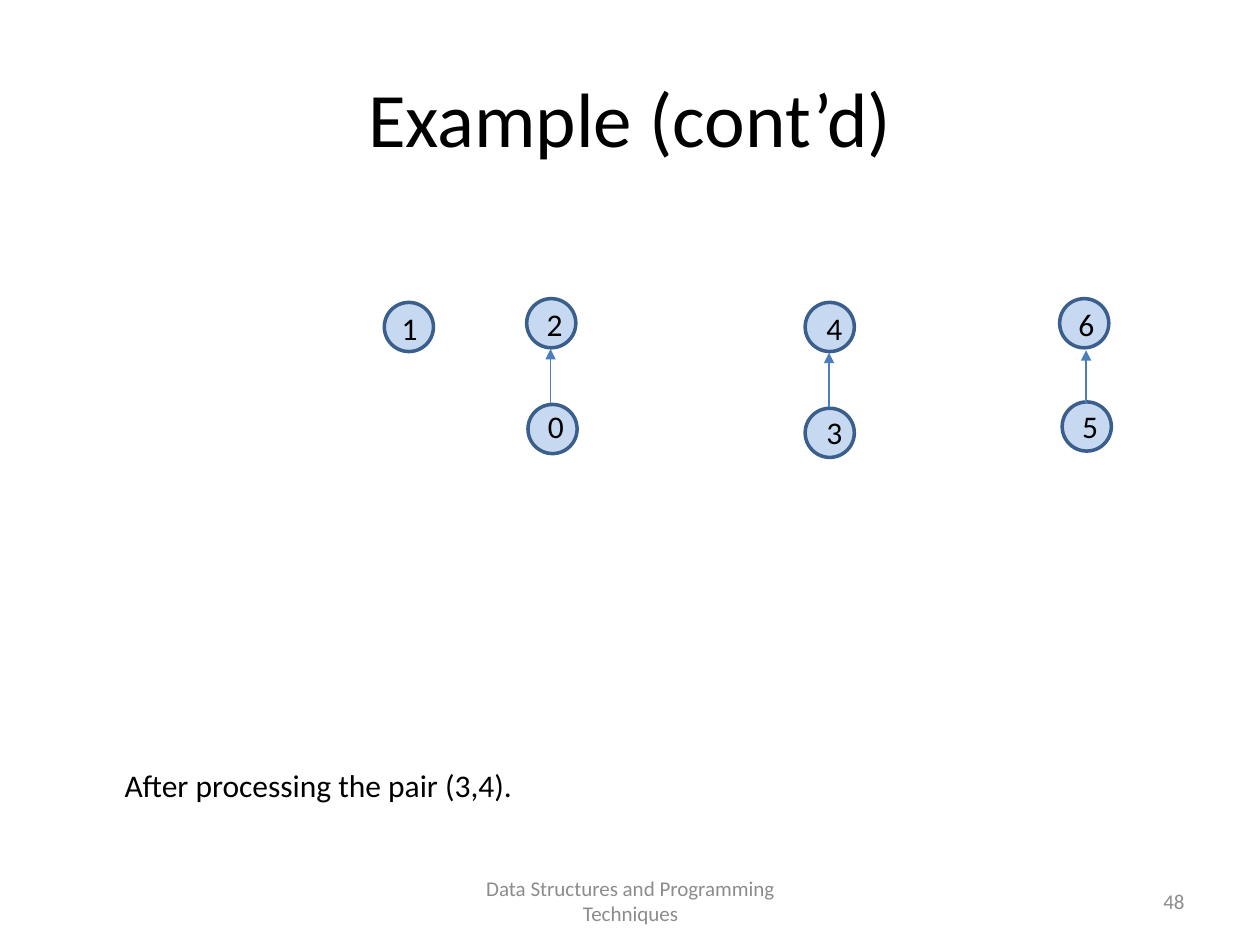
import dataclasses

import lxml.etree
import pptx
import pptx.dml.color
import pptx.enum.shapes
import pptx.enum.text
import pptx.oxml.ns
import pptx.util

Inches = pptx.util.Inches
Pt = pptx.util.Pt
Align = pptx.enum.text.PP_ALIGN
Anchor = pptx.enum.text.MSO_ANCHOR
qn = pptx.oxml.ns.qn


@dataclasses.dataclass(frozen=True)
class Theme:
    font: str = "Calibri"
    text: str = "000000"
    muted: str = "8C8C8C"
    node_fill: str = "C6D9F1"
    node_line: str = "3A5F8C"
    link: str = "4B7EBC"
    title_size: int = 44
    body_size: int = 18
    footer_size: int = 12


class ForestSlide:
    NODE = 0.39
    LABEL = (0.27, 0.4)

    def __init__(self, slide, theme):
        self.slide = slide
        self.theme = theme

    def color(self, value):
        return pptx.dml.color.RGBColor.from_string(value)

    def text(self, words, box, size, color, align=Align.LEFT, anchor=Anchor.TOP):
        frame = self.slide.shapes.add_textbox(*map(Inches, box)).text_frame
        frame.word_wrap = True
        frame.vertical_anchor = anchor
        frame.text = words
        paragraph = frame.paragraphs[0]
        paragraph.alignment = align
        font = paragraph.runs[0].font
        font.name = self.theme.font
        font.size = Pt(size)
        font.color.rgb = self.color(color)

    def node(self, left, top):
        circle = self.slide.shapes.add_shape(
            pptx.enum.shapes.MSO_SHAPE.OVAL,
            *map(Inches, (left, top, self.NODE, self.NODE)))
        circle.shadow.inherit = False
        circle.fill.solid()
        circle.fill.fore_color.rgb = self.color(self.theme.node_fill)
        circle.line.color.rgb = self.color(self.theme.node_line)
        circle.line.width = Pt(2)

    def label(self, digit, left, top):
        self.text(digit, (left, top, *self.LABEL), self.theme.body_size,
                  self.theme.text, Align.CENTER)

    def arrow_up(self, x, start, end):
        link = self.slide.shapes.add_connector(
            pptx.enum.shapes.MSO_CONNECTOR.STRAIGHT,
            *map(Inches, (x, start, x, end)))
        link.line.color.rgb = self.color(self.theme.link)
        link.line.width = Pt(1)
        lxml.etree.SubElement(link.line._get_or_add_ln(), qn("a:tailEnd"), type="triangle")
        lxml.etree.SubElement(link._element.spPr, qn("a:effectLst"))


def main():
    """Build the slide showing the forest after the pair (3,4)."""
    deck = pptx.Presentation()
    deck.slide_width, deck.slide_height = Inches(10), Inches(7.5)
    theme = Theme()
    forest = ForestSlide(deck.slides.add_slide(deck.slide_layouts[6]), theme)

    forest.text("Example (cont’d)", (0.5, 0.3, 9, 1.25), theme.title_size,
                theme.text, Align.CENTER, Anchor.MIDDLE)
    footers = [
        ("Data Structures and Programming Techniques", 3.42, 3.17, Align.CENTER),
        ("48", 7.17, 2.33, Align.RIGHT),
    ]
    for words, left, width, align in footers:
        forest.text(words, (left, 6.95, width, 0.4), theme.footer_size,
                    theme.muted, align, Anchor.MIDDLE)

    vertices = [
        ("0", (4.19, 3.21), (4.25, 3.18)),
        ("1", (3.05, 2.4), (3.09, 2.4)),
        ("2", (4.18, 2.37), (4.24, 2.37)),
        ("6", (8.41, 2.37), (8.46, 2.37)),
        ("5", (8.43, 3.19), (8.49, 3.18)),
        ("4", (6.39, 2.4), (6.46, 2.4)),
        ("3", (6.39, 3.24), (6.46, 3.23)),
    ]
    for digit, circle_at, label_at in vertices:
        forest.node(*circle_at)
        forest.label(digit, *label_at)

    forest.text("After processing the pair (3,4).", (0.89, 6.03, 7.26, 0.4),
                theme.body_size, theme.text)

    for x, child_top in ((4.37, 3.2), (8.62, 3.21), (6.58, 3.23)):
        forest.arrow_up(x, child_top, child_top - 0.43)

    deck.save("out.pptx")


if __name__ == "__main__":
    main()
